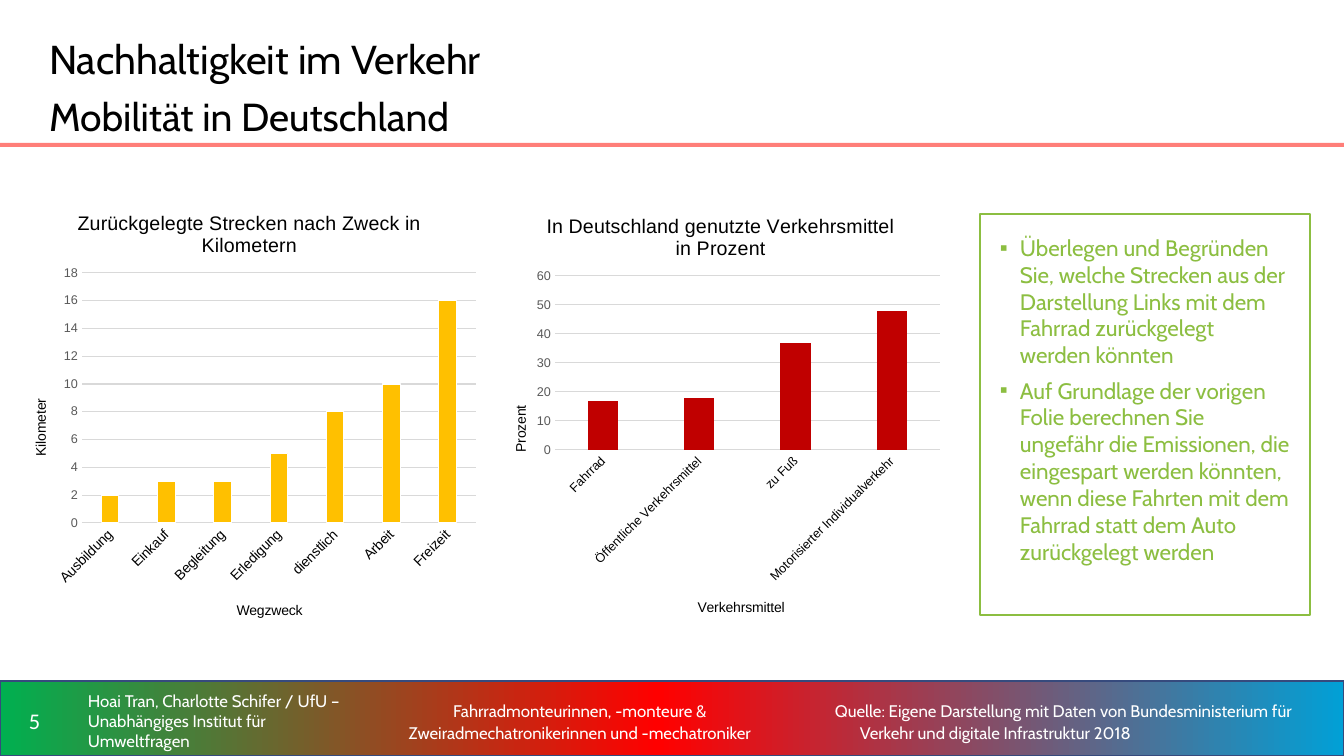
from lxml import etree
from pptx import Presentation
from pptx.chart.data import CategoryChartData
from pptx.dml.color import RGBColor
from pptx.enum.chart import XL_CHART_TYPE, XL_TICK_MARK
from pptx.enum.shapes import MSO_SHAPE
from pptx.enum.text import MSO_ANCHOR, PP_ALIGN
from pptx.oxml.ns import qn
from pptx.util import Pt

PX = 914400 / 100.8  # EMU per px
BLACK = RGBColor(0x00, 0x00, 0x00)
WHITE = RGBColor(0xFF, 0xFF, 0xFF)
GREY = RGBColor(0x59, 0x59, 0x59)
GRID = RGBColor(0xD9, 0xD9, 0xD9)
GREEN = RGBColor(0x8C, 0xBE, 0x41)
CORAL = RGBColor(0xFF, 0x7E, 0x79)
NAVY = RGBColor(0x36, 0x4A, 0x7D)
YELLOW = RGBColor(0xFF, 0xC0, 0x00)
RED = RGBColor(0xC0, 0x00, 0x00)
FOOTER_STOPS = [(0, RGBColor(0x00, 0xB0, 0x50)), (49, RGBColor(0xFF, 0x00, 0x00)),
                (100, RGBColor(0x01, 0xA0, 0xD6))]


def px(*values):
    return [round(v * PX) for v in values]


def child(parent, tag, **attrs):
    return etree.SubElement(parent, qn(tag), {k: str(v) for k, v in attrs.items()})


def set_font(font, size, color, name):
    font.size, font.name, font.bold = Pt(size), name, False
    font.color.rgb = color


def add_rect(s, box, fill=None, line=None, width=1):
    sp = s.shapes.add_shape(MSO_SHAPE.RECTANGLE, *px(*box))
    sp.shadow.inherit = False
    if fill is not None:
        sp.fill.solid()
        sp.fill.fore_color.rgb = fill
    if line is None:
        sp.line.fill.background()
    else:
        sp.line.color.rgb = line
        sp.line.width = Pt(width)
    return sp


def set_gradient(sp, stops):
    sp.fill.gradient()
    sp.fill.gradient_angle = 0
    gs_list = sp._element.spPr.find(qn("a:gradFill")).find(qn("a:gsLst"))
    for gs in list(gs_list):
        gs_list.remove(gs)
    for pos, color in stops:
        child(child(gs_list, "a:gs", pos=pos * 1000), "a:srgbClr", val=color)


def set_indent(p, left, first, bullet=None, color=None):
    pPr = p._p.get_or_add_pPr()
    pPr.set("marL", str(px(left)[0]))
    pPr.set("indent", str(px(first)[0]))
    if bullet:
        child(child(pPr, "a:buClr"), "a:srgbClr", val=color)
        child(pPr, "a:buFont", typeface="Arial")
        child(pPr, "a:buChar", char=bullet)


def write(sp, paragraphs, sizes=(12,), color=WHITE, font="Cabin", align=PP_ALIGN.LEFT,
          anchor=MSO_ANCHOR.MIDDLE, spacing=None, before=0, indent=None, bullet=None,
          inset=(10, 5)):
    """Fill a shape with text; a newline is a line break, with one size per line."""
    tf = sp.text_frame
    tf.word_wrap = True
    tf.vertical_anchor = anchor
    tf.margin_left = tf.margin_right = px(inset[0])[0]
    tf.margin_top = tf.margin_bottom = px(inset[1])[0]
    for i, text in enumerate(paragraphs):
        p = tf.add_paragraph() if i else tf.paragraphs[0]
        if indent:
            set_indent(p, *indent, bullet, color)
        p.alignment = align
        if spacing:
            p.line_spacing = spacing
        if i and before:
            p.space_before = Pt(before)
        for j, line in enumerate(text.split("\n")):
            if j:
                p.add_line_break()
            r = p.add_run()
            r.text = line
            set_font(r.font, sizes[min(j, len(sizes) - 1)], color, font)


def add_text(s, box, text, **fmt):
    write(s.shapes.add_textbox(*px(*box)), [text], **fmt)


def place(element, index, chart_box, left, top, width=None, height=None):
    """Give a chart part a fixed place, in slide px."""
    for old in element.findall(qn("c:layout")):
        element.remove(old)
    layout = etree.Element(qn("c:layout"))
    element.insert(index, layout)
    manual = child(layout, "c:manualLayout")
    x, y, w, h = chart_box
    if width:
        child(manual, "c:layoutTarget", val="inner")
    child(manual, "c:xMode", val="edge")
    child(manual, "c:yMode", val="edge")
    child(manual, "c:x", val=round((left - x) / w, 4))
    child(manual, "c:y", val=round((top - y) / h, 4))
    if width:
        child(manual, "c:w", val=round(width / w, 4))
        child(manual, "c:h", val=round(height / h, 4))


def set_title(title, text, size, chart_box, pos, rotation=None):
    tf = title.text_frame
    tf.text = text
    set_font(tf.paragraphs[0].runs[0].font, size, BLACK, "Arial")
    if rotation is not None:
        tf._txBody.bodyPr.set("rot", str(rotation * 60000))
        tf._txBody.bodyPr.set("vert", "horz")
    place(title._element, 1, chart_box, *pos)


def add_columns(s, box, plot_box, values, color, title, cat_title, val_title,
                top, step, cat_size, outline=None):
    """Each title is a pair of text and (left, top)."""
    data = CategoryChartData()
    data.categories = list(values)
    data.add_series("Series 1", list(values.values()))
    chart = s.shapes.add_chart(XL_CHART_TYPE.COLUMN_CLUSTERED, *px(*box), data).chart
    chart.has_legend = False
    set_font(chart.font, 10, BLACK, "Arial")
    set_title(chart.chart_title, title[0], 14, box, title[1])
    chart.chart_title.include_in_layout = False

    cat, val = chart.category_axis, chart.value_axis
    for axis, size, tint in ((cat, cat_size, BLACK), (val, 9, GREY)):
        axis.major_tick_mark = axis.minor_tick_mark = XL_TICK_MARK.NONE
        set_font(axis.tick_labels.font, size, tint, "Arial")
    set_title(cat.axis_title, cat_title[0], 10, box, cat_title[1])
    set_title(val.axis_title, val_title[0], 10, box, val_title[1], rotation=-90)
    cat._element.find(qn("c:txPr")).find(qn("a:bodyPr")).set("rot", str(-45 * 60000))
    val.minimum_scale, val.maximum_scale, val.major_unit = 0, top, step
    val.format.line.fill.background()
    for line in (cat.format.line, val.major_gridlines.format.line):
        line.color.rgb = GRID
        line.width = Pt(0.75)

    plot = chart.plots[0]
    plot.gap_width, plot.overlap, plot.vary_by_categories = 219, -27, False
    bars = plot.series[0].format
    bars.fill.solid()
    bars.fill.fore_color.rgb = color
    if outline is not None:
        bars.line.color.rgb = outline
        bars.line.width = Pt(0.75)
    place(chart._chartSpace.chart.plotArea, 0, box, *plot_box)


def main():
    prs = Presentation()
    prs.slide_width, prs.slide_height = px(1344, 756)
    s = prs.slides.add_slide(prs.slide_layouts[6])

    # Footer band and rule under the title
    set_gradient(add_rect(s, (0, 681, 1344, 75), line=NAVY), FOOTER_STOPS)
    add_rect(s, (0, 143, 1344, 4), fill=CORAL)

    # Title
    add_text(s, (39, 20, 1007, 119), "Nachhaltigkeit im Verkehr\nMobilität in Deutschland",
             sizes=(28.8, 27.9), color=BLACK, anchor=MSO_ANCHOR.TOP, spacing=1.2)

    # Footer texts
    add_text(s, (0, 690, 69, 61), "5", sizes=(16,), font="Calibri", align=PP_ALIGN.CENTER)
    add_text(s, (78, 690, 280, 61),
             "Hoai Tran, Charlotte Schifer / UfU – Unabhängiges Institut für Umweltfragen")
    add_text(s, (369, 690, 422, 61),
             "Fahrradmonteurinnen, -monteure & Zweiradmechatronikerinnen und -mechatroniker",
             align=PP_ALIGN.CENTER, spacing=1.1)
    add_text(s, (800, 690, 509, 61),
             "Quelle: Eigene Darstellung mit Daten von Bundesministerium für Verkehr "
             "und digitale Infrastruktur 2018", spacing=1.1, indent=(50, -25))

    # Charts
    add_columns(s, (6, 188, 480, 448), (82, 273, 394, 250),
                {"Ausbildung": 2, "Einkauf": 3, "Begleitung": 3, "Erledigung": 5,
                 "dienstlich": 8, "Arbeit": 10, "Freizeit": 16}, YELLOW,
                ("Zurückgelegte Strecken nach Zweck in Kilometern", (74, 207)),
                ("Wegzweck", (234, 599)), ("Kilometer", (29, 396)),
                top=18, step=2, cat_size=10, outline=WHITE)
    add_columns(s, (486, 191, 464, 444), (555, 276, 385, 174),
                {"Fahrrad": 17, "Öffentliche Verkehrsmittel": 18, "zu Fuß": 37,
                 "Motorisierter Individualverkehr": 48}, RED,
                ("In Deutschland genutzte Verkehrsmittel in Prozent", (543, 210)),
                ("Verkehrsmittel", (695, 596)), ("Prozent", (509, 403)),
                top=60, step=10, cat_size=9)

    # Task box
    write(add_rect(s, (980, 214, 330, 401), fill=WHITE, line=GREEN, width=1.5),
          ["Überlegen und Begründen Sie, welche Strecken aus der Darstellung Links mit dem "
           "Fahrrad zurückgelegt werden könnten",
           "Auf Grundlage der vorigen Folie berechnen Sie ungefähr die Emissionen, die "
           "eingespart werden könnten, wenn diese Fahrten mit dem Fahrrad statt dem Auto "
           "zurückgelegt werden"],
          sizes=(16,), color=GREEN, anchor=MSO_ANCHOR.TOP, before=6, indent=(20, -20),
          bullet="▪", inset=(20, 20))

    prs.save("out.pptx")


if __name__ == "__main__":
    main()
